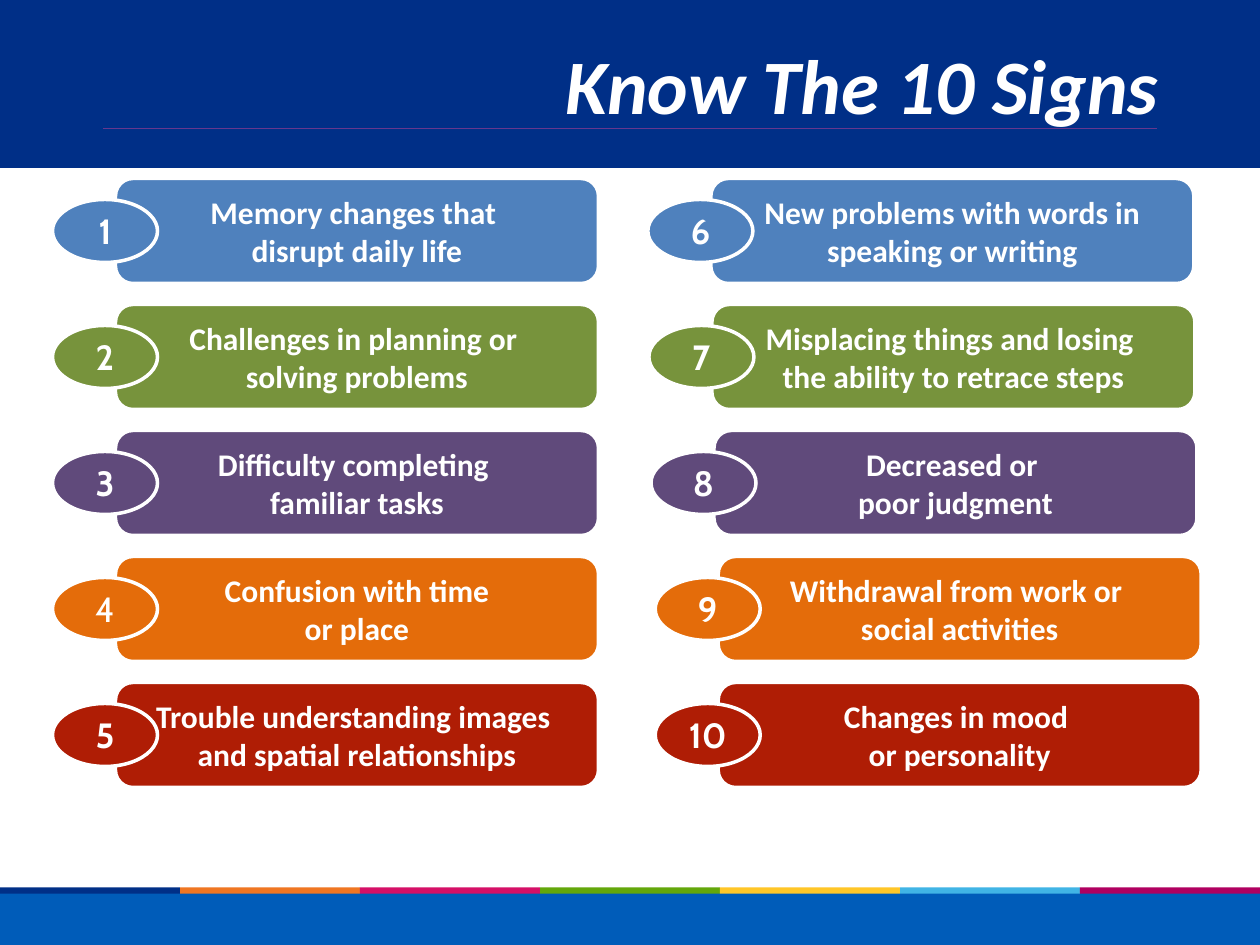
from lxml.etree import SubElement
from pptx import Presentation
from pptx.dml.color import RGBColor
from pptx.enum.shapes import MSO_CONNECTOR, MSO_SHAPE
from pptx.enum.text import MSO_ANCHOR, MSO_AUTO_SIZE as AUTO_SIZE, PP_ALIGN
from pptx.oxml.ns import qn
from pptx.util import Inches, Pt

WHITE = RGBColor(0xFF, 0xFF, 0xFF)
NAVY = RGBColor(0x00, 0x2F, 0x87)
ROYAL = RGBColor(0x00, 0x5C, 0xB9)
ORANGE = RGBColor(0xEF, 0x76, 0x22)
PINK = RGBColor(0xD5, 0x10, 0x67)
GREEN = RGBColor(0x63, 0xA7, 0x0A)
YELLOW = RGBColor(0xFF, 0xC6, 0x27)
SKY = RGBColor(0x40, 0xB4, 0xE5)
MAGENTA = RGBColor(0xB0, 0x00, 0x60)
RULE_PURPLE = RGBColor(0x65, 0x37, 0x8E)
STRIPE_COLORS = [NAVY, ORANGE, PINK, GREEN, YELLOW, SKY, MAGENTA]
SIGN_COLORS = [
    RGBColor(0x4F, 0x81, 0xBD),
    RGBColor(0x77, 0x93, 0x3C),
    RGBColor(0x60, 0x4A, 0x7B),
    RGBColor(0xE4, 0x6C, 0x0A),
    RGBColor(0xAF, 0x1D, 0x05),
]

COLUMNS, ROWS = 120, 90
FIRST_ROW, ROW_STEP = 17, 12
LEFT_STARTS = [11] * 5
RIGHT_STARTS = [67.7, 67.8, 68, 68.4, 68.4]
SIGNS = [
    "Memory changes that \ndisrupt daily life",
    "Challenges in planning or \nsolving problems",
    "Difficulty completing \nfamiliar tasks",
    "Confusion with time\nor place",
    "Trouble understanding images \nand spatial relationships",
    "New problems with words in speaking or writing",
    "Misplacing things and losing \nthe ability to retrace steps",
    "Decreased or \npoor judgment",
    "Withdrawal from work or \nsocial activities",
    "Changes in mood \nor personality",
]


class SignsSlide:
    text_font = "Calibri"
    number_font = "Cabin"

    def __init__(self, presentation):
        self.column = presentation.slide_width / COLUMNS
        self.row = presentation.slide_height / ROWS
        self.slide = presentation.slides.add_slide(presentation.slide_layouts[5])

    def place(self, left, top, width, height):
        return (round(left * self.column), round(top * self.row),
                round(width * self.column), round(height * self.row))

    def format_text(self, text_frame, font_name, size, bold=True, italic=False,
                    alignment=PP_ALIGN.CENTER):
        for paragraph in text_frame.paragraphs:
            paragraph.alignment = alignment
            for run in paragraph.runs:
                run.font.name = font_name
                run.font.size = Pt(size)
                run.font.bold = bold
                run.font.italic = italic
                run.font.color.rgb = WHITE

    def block(self, kind, color, *box):
        shape = self.slide.shapes.add_shape(kind, *self.place(*box))
        shape.shadow.inherit = False
        shape.fill.solid()
        shape.fill.fore_color.rgb = color
        shape.line.fill.background()
        return shape

    def label(self, kind, color, text, font_name, size, bold, *box):
        shape = self.block(kind, color, *box)
        shape.line.color.rgb = WHITE
        shape.line.width = Pt(2)
        shape.text_frame.text = text
        shape.text_frame.vertical_anchor = MSO_ANCHOR.MIDDLE
        self.format_text(shape.text_frame, font_name, size, bold)

    def sign(self, number, text, color, left, top):
        self.label(MSO_SHAPE.ROUNDED_RECTANGLE, color, text, self.text_font, 18,
                   True, left, top, 46, 10)
        self.label(MSO_SHAPE.OVAL, color, str(number), self.number_font, 20,
                   number != 4, left - 6, top + 2, 10, 6)

    def rule(self, color, left, right, row):
        x_start, y, x_end, _ = self.place(left, row, right, 0)
        line = self.slide.shapes.add_connector(
            MSO_CONNECTOR.STRAIGHT, x_start, y, x_end, y)
        line.line.color.rgb = color
        line.line.width = Pt(1)
        SubElement(line._element.spPr, qn("a:effectLst"))

    def title(self, text, *box):
        title = self.slide.shapes.title
        title.left, title.top, title.width, title.height = self.place(*box)
        title.text_frame.text = text
        title.text_frame.vertical_anchor = MSO_ANCHOR.TOP
        title.text_frame.auto_size = AUTO_SIZE.SHAPE_TO_FIT_TEXT
        self.format_text(title.text_frame, self.text_font, 44, italic=True,
                         alignment=PP_ALIGN.RIGHT)
        self.slide.shapes._spTree.append(title._element)


def main():
    presentation = Presentation()
    presentation.slide_width = Inches(10)
    presentation.slide_height = Inches(7.5)
    page = SignsSlide(presentation)

    page.block(MSO_SHAPE.RECTANGLE, ROYAL, 0, 85, COLUMNS, 5)
    stripe_width = COLUMNS / len(STRIPE_COLORS)
    for index, color in enumerate(STRIPE_COLORS):
        page.block(MSO_SHAPE.RECTANGLE, color,
                   index * stripe_width, 84.5, stripe_width, 0.6)
    page.block(MSO_SHAPE.RECTANGLE, NAVY, 0, 0, COLUMNS, 16)

    for index, (text, left) in enumerate(zip(SIGNS, LEFT_STARTS + RIGHT_STARTS)):
        row = index % len(SIGN_COLORS)
        page.sign(index + 1, text, SIGN_COLORS[row], left, FIRST_ROW + row * ROW_STEP)

    page.rule(RULE_PURPLE, 9.8, 110.2, 12.25)
    page.title("Know The 10 Signs", 8, 3, 103.6, 10.1)
    presentation.save("out.pptx")


if __name__ == "__main__":
    main()
